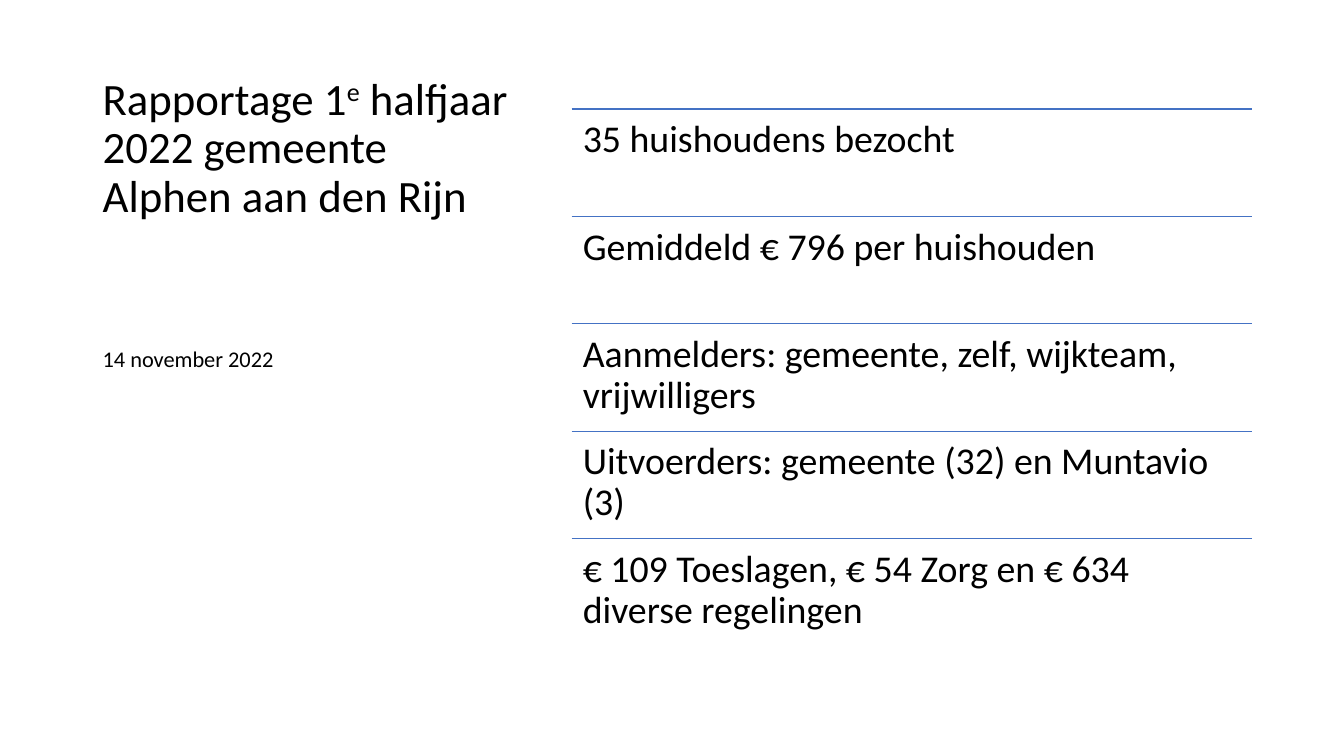
from dataclasses import dataclass

from lxml import etree
from pptx import Presentation
from pptx import util as u
from pptx.dml.color import RGBColor
from pptx.enum import shapes, text
from pptx.oxml.ns import qn


@dataclass(frozen=True)
class Theme:
    font: str = "Calibri"
    ink: RGBColor = RGBColor(0x00, 0x00, 0x00)
    rule: RGBColor = RGBColor(0x44, 0x72, 0xC4)
    rule_width: float = 1
    title_size: int = 32
    finding_size: int = 27
    date_size: int = 16
    line_spacing: float = 0.9


class ReportSlide:
    def __init__(self, slide, theme):
        self.slide = slide
        self.theme = theme

    def add_text(self, box, runs, size, insets=(0.1, 0.05, 0.1, 0.05),
                 anchor=text.MSO_ANCHOR.TOP):
        """Add one paragraph; runs are (wording, superscript) pairs."""
        frame = self.slide.shapes.add_textbox(*map(u.Inches, box)).text_frame
        frame.word_wrap = True
        frame.vertical_anchor = anchor
        (frame.margin_left, frame.margin_top,
         frame.margin_right, frame.margin_bottom) = map(u.Inches, insets)
        paragraph = frame.paragraphs[0]
        paragraph.line_spacing = self.theme.line_spacing
        for wording, superscript in runs:
            run = paragraph.add_run()
            run.text = wording
            run.font.name = self.theme.font
            run.font.size = u.Pt(size)
            run.font.color.rgb = self.theme.ink
            if superscript:
                run.font._element.set("baseline", "30000")

    def add_rule(self, left, top, width):
        rule = self.slide.shapes.add_connector(
            shapes.MSO_CONNECTOR.STRAIGHT, u.Inches(left), u.Inches(top),
            u.Inches(left + width), u.Inches(top))
        rule.line.color.rgb = self.theme.rule
        rule.line.width = u.Pt(self.theme.rule_width)
        etree.SubElement(rule._element.spPr, qn("a:effectLst"))

    def add_findings(self, box, findings):
        """Stack the findings in equal rows, each under a rule."""
        left, top, width, height = box
        row_height = height / len(findings)
        for index, finding in enumerate(findings):
            row_top = top + index * row_height
            self.add_rule(left, row_top, width)
            self.add_text((left, row_top, width, row_height), [(finding, False)],
                          self.theme.finding_size, insets=(0.11,) * 4)


FINDINGS = [
    "35 huishoudens bezocht",
    "Gemiddeld € 796 per huishouden",
    "Aanmelders: gemeente, zelf, wijkteam, vrijwilligers",
    "Uitvoerders: gemeente (32) en Muntavio (3)",
    "€ 109 Toeslagen, € 54 Zorg en € 634 diverse regelingen",
]


def main():
    deck = Presentation()
    deck.slide_width, deck.slide_height = u.Inches(13.33), u.Inches(7.5)
    theme = Theme()
    report = ReportSlide(deck.slides.add_slide(deck.slide_layouts[6]), theme)

    title = [("Rapportage 1", False), ("e", True),
             (" halfjaar 2022 gemeente Alphen aan den Rijn", False)]
    report.add_text((0.92, 0.5, 4.3, 1.75), title, theme.title_size,
                    anchor=text.MSO_ANCHOR.BOTTOM)
    report.add_findings((5.67, 1.08, 6.75, 5.33), FINDINGS)
    report.add_text((0.92, 2.25, 4.3, 4.17), [("14 november 2022", False)],
                    theme.date_size, insets=(0.1, 1.2, 0.1, 0.05))
    deck.save("out.pptx")


if __name__ == "__main__":
    main()
